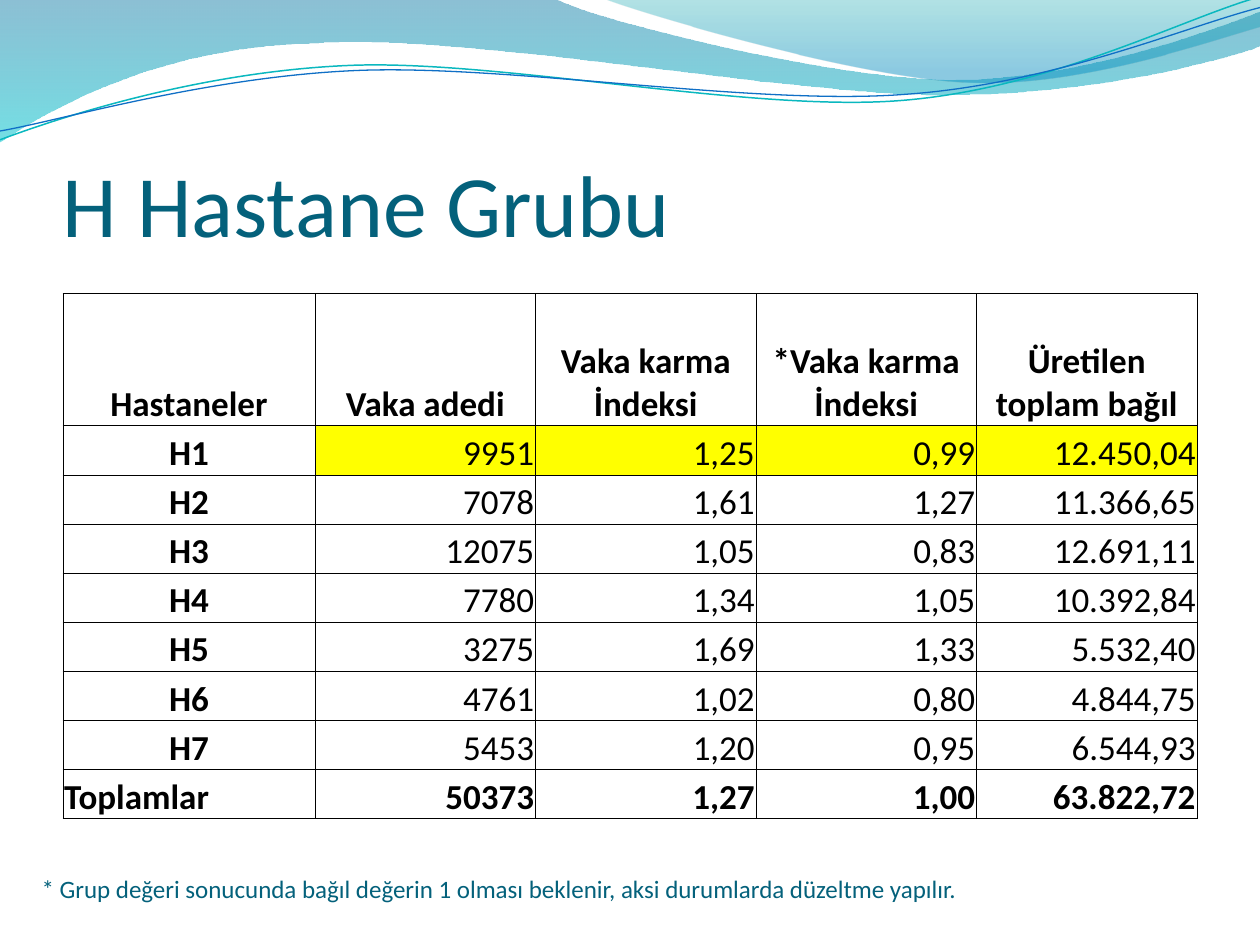
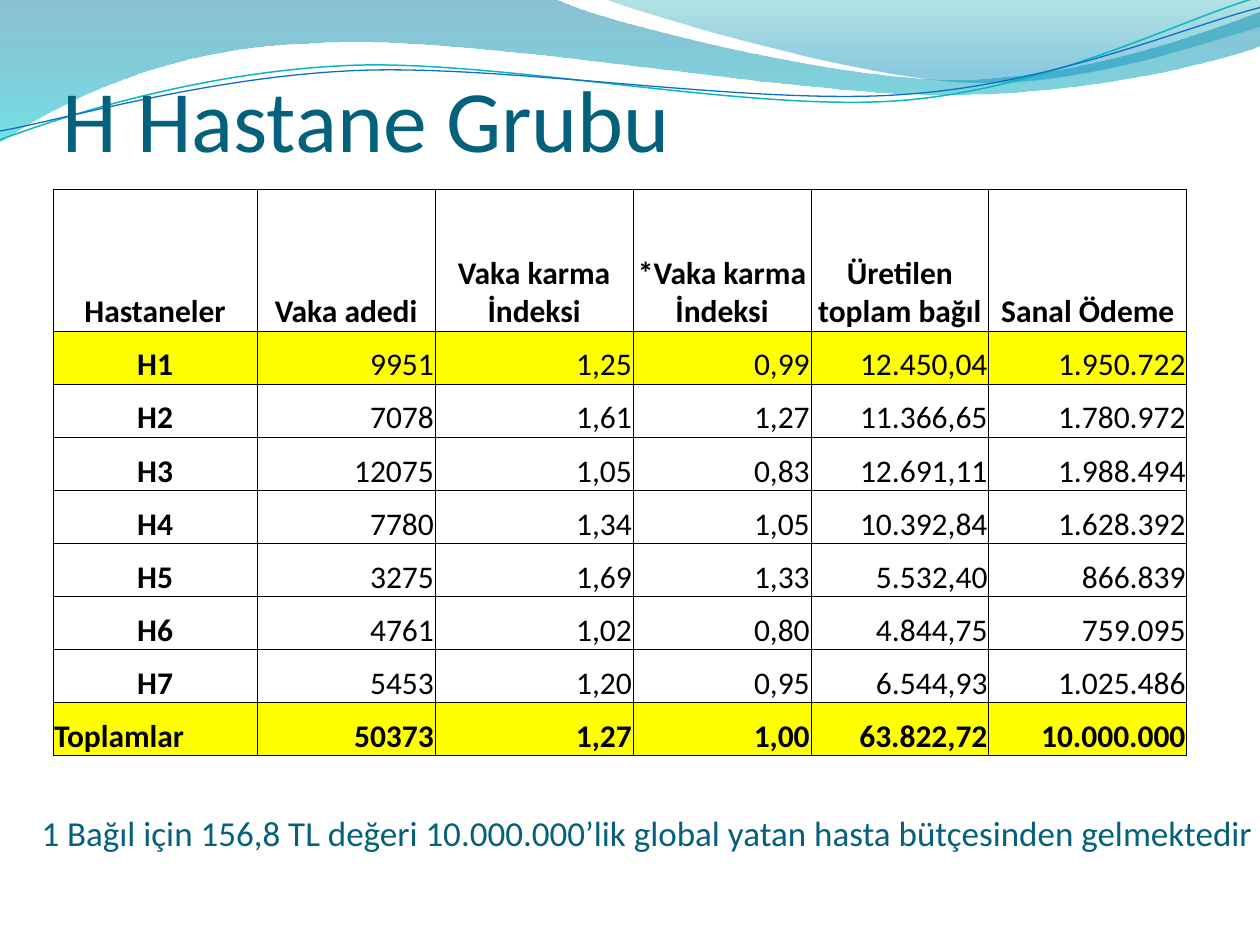
from dataclasses import dataclass

from lxml import etree
from pptx import Presentation
from pptx.dml.color import RGBColor
from pptx.enum.text import MSO_ANCHOR, PP_ALIGN
from pptx.oxml.ns import qn
from pptx.slide import Slide
from pptx.util import Inches, Pt

BOTTOM = MSO_ANCHOR.BOTTOM
LEFT, CENTER, RIGHT = PP_ALIGN.LEFT, PP_ALIGN.CENTER, PP_ALIGN.RIGHT

FONT = "Calibri"
TEAL, BLACK, YELLOW = "04617B", "000000", "FFFF00"
TITLE = "H Hastane Grubu"
TABLE_WIDTH = 9

Point = tuple[float, float]
Segment = tuple[Point, ...]  # one point: straight line; three points: Bézier curve


@dataclass(frozen=True)
class GradientStop:
    position: float
    color: str
    opacity: int


@dataclass(frozen=True)
class Band:
    start: Point
    segments: tuple[Segment, ...]
    stops: tuple[GradientStop, GradientStop]


@dataclass(frozen=True)
class Ribbon:
    start: Point
    segments: tuple[Segment, ...]
    color: str
    width: float


@dataclass(frozen=True)
class TextLine:
    text: str
    box: tuple[float, float, float, float]
    size: float
    spacing: float | None = None


@dataclass(frozen=True)
class HospitalTable:
    left: float
    top: float
    height: float
    header_height: float
    column_shares: tuple[float, ...]
    size: int
    rows: list[list[str]]
    highlighted: set[tuple[int, int]]


BANDS = (
    Band((0, 0), (
        ((4.4, -0.01),),
        ((4.76, 0.17), (6.64, 0.63), (7.58, 0.63)),
        ((8.53, 0.63), (9.58, 0.26), (10, 0.09)),
        ((10.01, 0.36),),
        ((9.83, 0.44), (8.7, 0.76), (7.46, 0.75)),
        ((6.22, 0.75), (3.82, 0.28), (2.57, 0.34)),
        ((1.29, 0.36), (0.46, 0.83), (-0.01, 1.13)),
        ((0, 0),),
    ), (GradientStop(0, "0074A1", 45), GradientStop(1, "00C6CF", 55))),
    Band((4.79, -0.01), (
        ((5.09, 0.11), (6.82, 0.62), (7.69, 0.65)),
        ((8.56, 0.69), (9.61, 0.32), (10, 0.21)),
        ((10, 0),),
        ((4.79, -0.01),),
    ), (GradientStop(0, "00A1A9", 30), GradientStop(0.8, "008BBF", 45))),
)

RIBBONS = (
    Ribbon((0, 1.11), (
        ((0.48, 0.93), (1.58, 0.57), (2.77, 0.52)),
        ((3.95, 0.47), (5.93, 0.89), (7.13, 0.8)),
        ((8.33, 0.71), (9.38, 0.15), (9.98, -0.02)),
    ), "0AB8BF", 0.85),
    Ribbon((0, 1.04), (
        ((0.47, 0.96), (1.64, 0.61), (2.83, 0.56)),
        ((4.03, 0.51), (5.97, 0.84), (7.17, 0.75)),
        ((8.36, 0.67), (9.41, 0.21), (10, 0.06)),
    ), "0F6FC6", 0.75),
)

CASE_ROWS = [
    ["Hastaneler", "Vaka adedi", "Vaka karma İndeksi", "*Vaka karma İndeksi",
     "Üretilen toplam bağıl"],
    ["H1", "9951", "1,25", "0,99", "12.450,04"],
    ["H2", "7078", "1,61", "1,27", "11.366,65"],
    ["H3", "12075", "1,05", "0,83", "12.691,11"],
    ["H4", "7780", "1,34", "1,05", "10.392,84"],
    ["H5", "3275", "1,69", "1,33", "5.532,40"],
    ["H6", "4761", "1,02", "0,80", "4.844,75"],
    ["H7", "5453", "1,20", "0,95", "6.544,93"],
    ["Toplamlar", "50373", "1,27", "1,00", "63.822,72"],
]
PAYMENTS = ["Sanal Ödeme", "1.950.722", "1.780.972", "1.988.494", "1.628.392",
            "866.839", "759.095", "1.025.486", "10.000.000"]
PAYMENT_ROWS = [row + [payment] for row, payment in zip(CASE_ROWS, PAYMENTS)]
TOTAL_ROW = len(CASE_ROWS) - 1


def rgb(color: str) -> RGBColor:
    return RGBColor.from_string(color)


def draw_path(slide: Slide, outline: Band | Ribbon, close: bool):
    """Draw an outline through all its points, then bend its three-point segments."""
    points = [(Inches(x), Inches(y)) for segment in outline.segments for x, y in segment]
    builder = slide.shapes.build_freeform(*map(Inches, outline.start))
    builder.add_line_segments(points, close=close)
    shape = builder.convert_to_shape()
    shape.shadow.inherit = False

    lines = iter(list(shape.element.iter(qn("a:lnTo"))))
    for segment in outline.segments:
        steps = [next(lines) for _ in segment]
        if len(steps) == 3:
            curve = etree.Element(qn("a:cubicBezTo"))
            steps[0].addprevious(curve)
            for step in steps:
                curve.append(step[0])
                step.getparent().remove(step)
    return shape


def draw_band(slide: Slide, band: Band) -> None:
    shape = draw_path(slide, band, close=True)
    shape.line.fill.background()
    shape.fill.gradient()
    shape.fill.gradient_angle = 270
    for gradient_stop, stop in zip(shape.fill.gradient_stops, band.stops):
        gradient_stop.position = stop.position
        gradient_stop.color.rgb = rgb(stop.color)
    for color, stop in zip(shape.element.iter(qn("a:srgbClr")), band.stops):
        etree.SubElement(color, qn("a:alpha"), val=str(stop.opacity * 1000))


def draw_ribbon(slide: Slide, ribbon: Ribbon) -> None:
    shape = draw_path(slide, ribbon, close=False)
    shape.fill.background()
    shape.line.color.rgb = rgb(ribbon.color)
    shape.line.width = Pt(ribbon.width)


def format_paragraph(paragraph, size: float, color: str, bold: bool = False) -> None:
    for run in paragraph.runs:
        run.font.name = FONT
        run.font.size = Pt(size)
        run.font.bold = bold
        run.font.color.rgb = rgb(color)


def draw_text(slide: Slide, line: TextLine) -> None:
    frame = slide.shapes.add_textbox(*map(Inches, line.box)).text_frame
    frame.word_wrap = True
    frame.vertical_anchor = BOTTOM
    frame.margin_left = frame.margin_right = frame.margin_bottom = 0
    frame.margin_top = Inches(0.05)
    frame.text = line.text
    paragraph = frame.paragraphs[0]
    paragraph.line_spacing = line.spacing
    format_paragraph(paragraph, line.size, TEAL)


def add_borders(cell) -> None:
    properties = cell._tc.get_or_add_tcPr()
    for index, side in enumerate(("lnL", "lnR", "lnT", "lnB")):
        border = etree.Element(qn(f"a:{side}"), w=str(Pt(0.5)))
        fill = etree.SubElement(border, qn("a:solidFill"))
        etree.SubElement(fill, qn("a:srgbClr"), val=BLACK)
        properties.insert(index, border)


def cell_alignment(row: int, column: int):
    if row == 0:
        return CENTER
    if column > 0:
        return RIGHT
    return LEFT if row == TOTAL_ROW else CENTER


def draw_table(slide: Slide, data: HospitalTable) -> None:
    shares = data.column_shares
    row_height = (data.height - data.header_height) / TOTAL_ROW
    table = slide.shapes.add_table(
        len(data.rows), len(shares), Inches(data.left), Inches(data.top),
        Inches(TABLE_WIDTH), Inches(data.height)).table
    table.first_row = table.horz_banding = False
    for column, share in zip(table.columns, shares):
        column.width = Inches(TABLE_WIDTH * share / sum(shares))
    for r, row in enumerate(table.rows):
        row.height = Inches(row_height if r else data.header_height)

    for r, values in enumerate(data.rows):
        for c, value in enumerate(values):
            cell = table.cell(r, c)
            cell.vertical_anchor = BOTTOM
            cell.margin_left = cell.margin_top = cell.margin_right = Inches(0.01)
            cell.margin_bottom = 0
            if (r, c) in data.highlighted:
                cell.fill.solid()
                cell.fill.fore_color.rgb = rgb(YELLOW)
            else:
                cell.fill.background()
            add_borders(cell)
            cell.text_frame.text = value
            paragraph = cell.text_frame.paragraphs[0]
            paragraph.alignment = cell_alignment(r, c)
            format_paragraph(paragraph, data.size, BLACK,
                             bold=r in (0, TOTAL_ROW) or c == 0)


def add_hospital_slide(presentation, title: TextLine, table: HospitalTable,
                       footnote: TextLine) -> None:
    slide = presentation.slides.add_slide(presentation.slide_layouts[6])
    for band in BANDS:
        draw_band(slide, band)
    for ribbon in RIBBONS:
        draw_ribbon(slide, ribbon)
    draw_text(slide, title)
    draw_table(slide, table)
    draw_text(slide, footnote)


def main() -> None:
    presentation = Presentation()
    presentation.slide_width = Inches(10)
    presentation.slide_height = Inches(7.5)

    add_hospital_slide(
        presentation,
        TextLine(TITLE, (0.5, 0.77, 9, 1.25), 50),
        HospitalTable(0.5, 2.33, 4.17, 1.05, (2, 1.75, 1.75, 1.75, 1.75), 20,
                      CASE_ROWS, {(1, c) for c in range(1, 5)}),
        TextLine("* Grup değeri sonucunda bağıl değerin 1 olması beklenir, "
                 "aksi durumlarda düzeltme yapılır.", (0.33, 6.75, 9, 0.42), 14.3),
    )
    add_hospital_slide(
        presentation,
        TextLine(TITLE, (0.5, 0.33, 9, 1.02), 50),
        HospitalTable(0.42, 1.5, 4.5, 1.13, (1.62, 1.41, 1.57, 1.41, 1.41, 1.57), 18,
                      PAYMENT_ROWS, {(r, c) for r in (1, TOTAL_ROW) for c in range(6)}),
        TextLine("1 Bağıl için 156,8 TL değeri 10.000.000’lik global yatan hasta "
                 "bütçesinden gelmektedir", (0.33, 6.25, 9.67, 0.52), 20, 0.8),
    )
    presentation.save("out.pptx")


if __name__ == "__main__":
    main()
